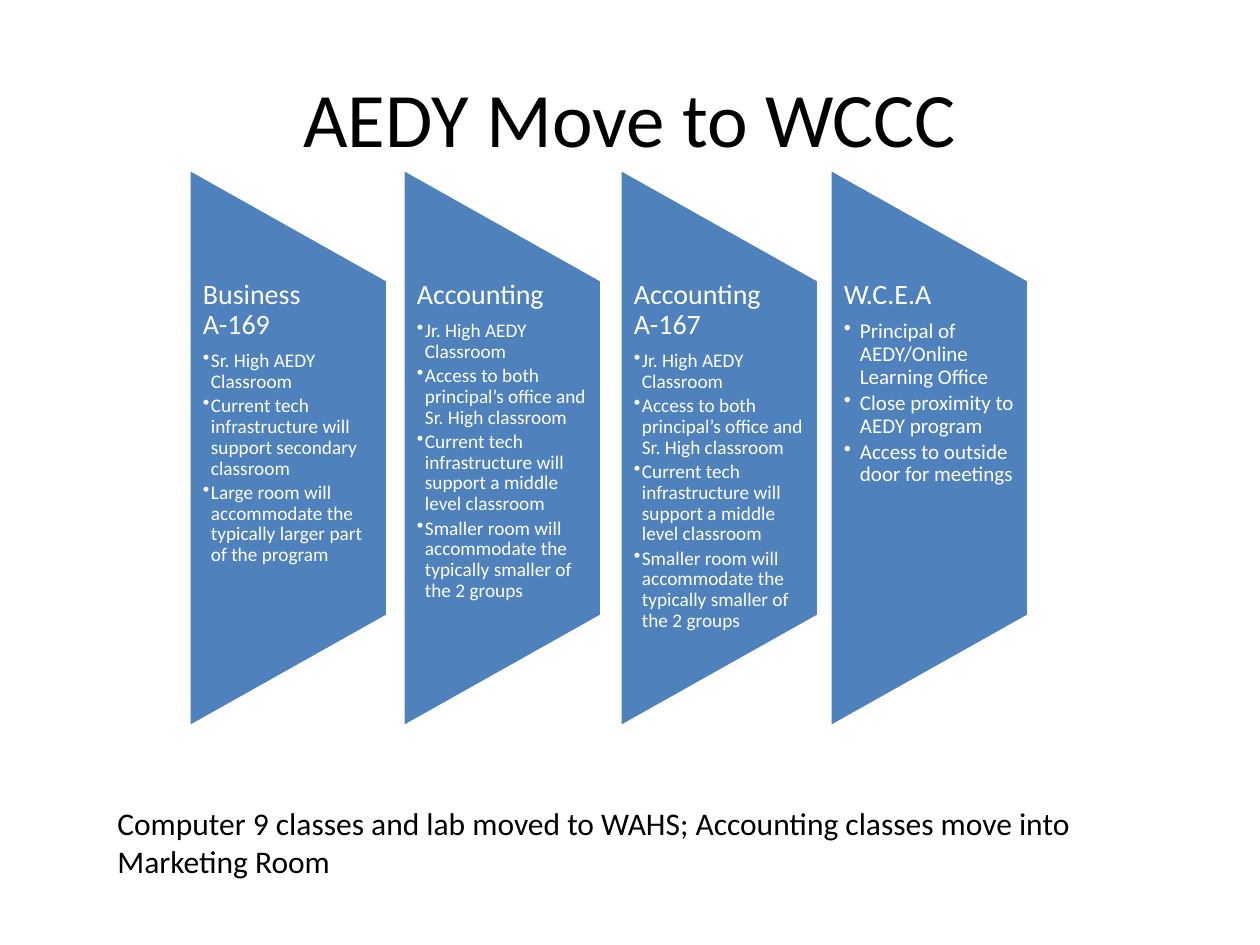
from lxml import etree
from pptx import Presentation
from pptx.dml.color import RGBColor
from pptx.enum.shapes import MSO_SHAPE
from pptx.enum.text import MSO_ANCHOR, PP_ALIGN
from pptx.oxml.ns import qn
from pptx.util import Pt

TRAPEZOID = MSO_SHAPE.FLOWCHART_MANUAL_OPERATION
TOP, MIDDLE = MSO_ANCHOR.TOP, MSO_ANCHOR.MIDDLE
LEFT, CENTER = PP_ALIGN.LEFT, PP_ALIGN.CENTER

BLUE = RGBColor(0x4F, 0x81, 0xBD)
WHITE = RGBColor(0xFF, 0xFF, 0xFF)
BLACK = RGBColor(0, 0, 0)
FONT = "Calibri"

TITLE = "AEDY Move to WCCC"
FOOTNOTE = ("Computer 9 classes and lab moved to WAHS; "
            "Accounting classes move into Marketing Room")
ACCOUNTING_POINTS = [
    "Jr. High AEDY Classroom",
    "Access to both principal’s office and Sr. High classroom",
    "Current tech infrastructure will support a middle level classroom",
    "Smaller room will accommodate the typically smaller of the 2 groups",
]
# left in px, heading, bullet size in pt, bullet indent in px, bullets
ROOMS = [
    (189, "Business\vA-169", 11, 8, [
        "Sr. High AEDY Classroom",
        "Current tech infrastructure will support secondary classroom",
        "Large room will accommodate the typically larger part of the program",
    ]),
    (403, "Accounting", 11, 8, ACCOUNTING_POINTS),
    (620, "Accounting\vA-167", 11, 8, ACCOUNTING_POINTS),
    (830, "W.C.E.A", 12, 16, [
        "Principal of AEDY/Online Learning Office",
        "Close proximity to AEDY program",
        "Access to outside door for meetings",
    ]),
]
PANEL_WIDTH, PANEL_HEIGHT, PANEL_MIDDLE = 199, 559, 448
TEXT_TOP, TEXT_HEIGHT, TEXT_INSET = 280, 336, 14


def px(count):
    return round(count * 914400 / 126)


def set_all(target, values):
    for name, value in values.items():
        setattr(target, name, value)


def write(para, text, size, color, **paragraph_format):
    para.text = text
    set_all(para, paragraph_format)
    set_all(para.font, {"name": FONT, "size": Pt(size)})
    para.font.color.rgb = color


def add_bullet(para, indent):
    properties = para._p.get_or_add_pPr()
    properties.set("marL", str(px(indent)))
    properties.set("indent", str(-px(indent)))
    etree.SubElement(properties, qn("a:buChar")).set("char", "•")


def add_panel(shapes, left):
    """Add the trapezoid, turned so that its long side stands on the left."""
    panel = shapes.add_shape(
        TRAPEZOID,
        px(left + (PANEL_WIDTH - PANEL_HEIGHT) / 2),
        px(PANEL_MIDDLE - PANEL_WIDTH / 2),
        px(PANEL_HEIGHT), px(PANEL_WIDTH))
    panel.rotation = 270
    panel.shadow.inherit = False
    panel.fill.solid()
    panel.fill.fore_color.rgb = BLUE
    panel.line.color.rgb = WHITE
    panel.line.width = Pt(2)


def add_room_text(shapes, left, heading, size, indent, points):
    box = shapes.add_textbox(px(left), px(TEXT_TOP), px(PANEL_WIDTH), px(TEXT_HEIGHT))
    frame = box.text_frame
    set_all(frame, {"word_wrap": True, "vertical_anchor": TOP,
                    "margin_left": px(TEXT_INSET), "margin_right": px(TEXT_INSET),
                    "margin_top": 0, "margin_bottom": 0})
    write(frame.paragraphs[0], heading, 16, WHITE,
          alignment=LEFT, line_spacing=0.9, space_after=Pt(6))
    for point in points:
        para = frame.add_paragraph()
        write(para, point, size, WHITE, level=1,
              alignment=LEFT, line_spacing=0.9, space_after=Pt(2))
        add_bullet(para, indent)


def main():
    deck = Presentation()
    set_all(deck, {"slide_width": px(1260), "slide_height": px(945)})
    slide = deck.slides.add_slide(deck.slide_layouts[5])
    shapes = slide.shapes

    title = shapes.title
    set_all(title, {"left": px(63), "top": px(38), "width": px(1134), "height": px(158)})
    title.text_frame.vertical_anchor = MIDDLE
    write(title.text_frame.paragraphs[0], TITLE, 44, BLACK, alignment=CENTER)

    for left, *content in ROOMS:
        add_panel(shapes, left)
        add_room_text(shapes, left, *content)

    footnote = shapes.add_textbox(px(105), px(798), px(1061), px(89))
    footnote.text_frame.word_wrap = True
    write(footnote.text_frame.paragraphs[0], FOOTNOTE, 18, BLACK)

    deck.save("out.pptx")


if __name__ == "__main__":
    main()
